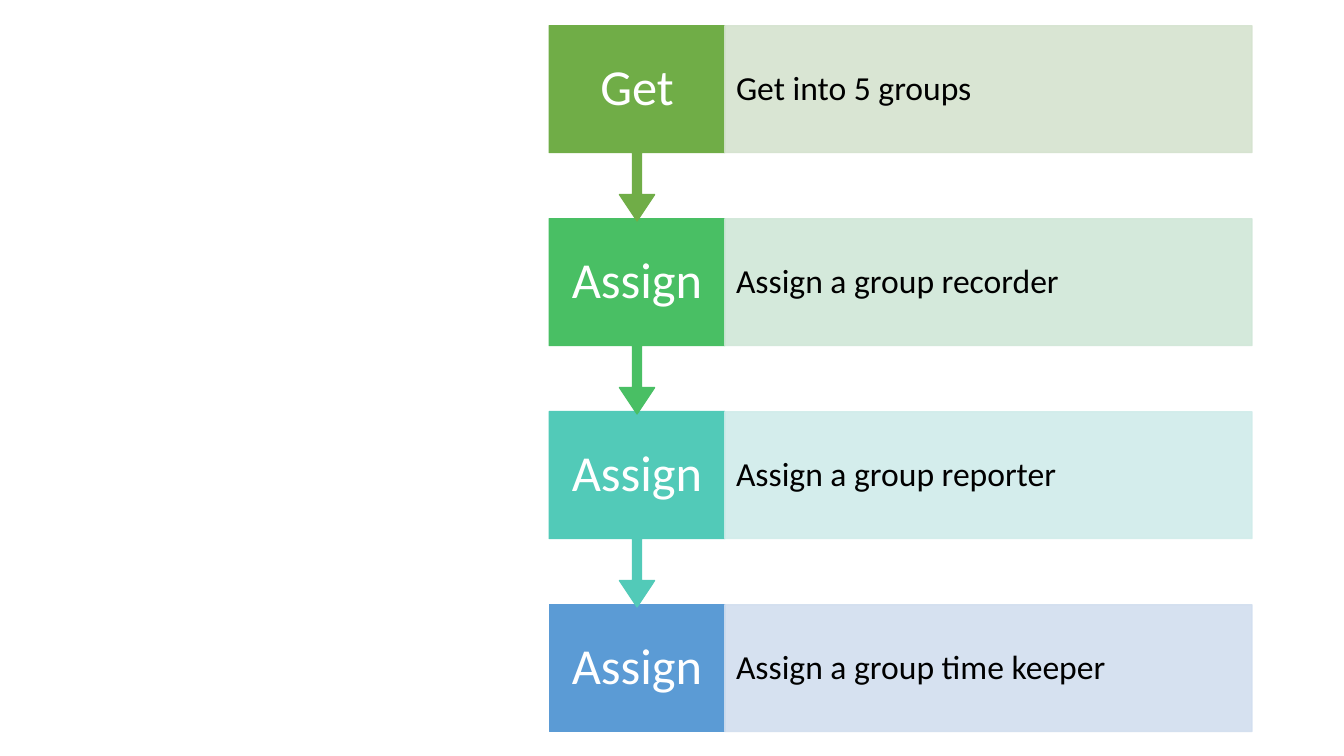
"""Build a slide with four group set-up steps joined by arrows."""
from dataclasses import dataclass

from lxml import etree
from pptx import Presentation
from pptx import util as u
from pptx.dml.color import RGBColor
from pptx.enum import shapes, text
from pptx.oxml import ns


@dataclass(frozen=True)
class Theme:
    font: str = "Calibri"
    verb_size: float = 36
    task_size: float = 24
    verb_color: str = "FFFFFF"
    task_color: str = "000000"
    line_width: float = 1
    line_spacing: float = 0.9
    task_opacity: int = 90
    step_colors: tuple = (
        ("70AD47", "D5E3CF"),
        ("49BF64", "D0E7D8"),
        ("52CAB8", "D0ECEA"),
        ("5B9BD5", "D2DEEF"),
    )


class StepSlide:
    def __init__(self, slide, theme):
        self.slide = slide
        self.theme = theme

    def box(self, kind, left, top, width, height, color):
        shape = self.slide.shapes.add_shape(
            kind, u.Pt(left), u.Pt(top), u.Pt(width), u.Pt(height))
        shape.shadow.inherit = False
        shape.fill.solid()
        shape.fill.fore_color.rgb = RGBColor.from_string(color)
        shape.line.color.rgb = RGBColor.from_string(color)
        shape.line.width = u.Pt(self.theme.line_width)
        return shape

    def label(self, shape, words, size, color, align, inset_x, inset_y):
        frame = shape.text_frame
        frame.word_wrap = True
        frame.vertical_anchor = text.MSO_ANCHOR.MIDDLE
        frame.margin_left = frame.margin_right = u.Pt(inset_x)
        frame.margin_top = frame.margin_bottom = u.Pt(inset_y)
        paragraph = frame.paragraphs[0]
        paragraph.alignment = align
        paragraph.line_spacing = self.theme.line_spacing
        run = paragraph.add_run()
        run.text = words
        run.font.name = self.theme.font
        run.font.size = u.Pt(size)
        run.font.color.rgb = RGBColor.from_string(color)

    def verb(self, words, left, top, width, height, color, arrow_height=0):
        kind = shapes.MSO_SHAPE.RECTANGLE
        if arrow_height:
            kind = shapes.MSO_SHAPE.DOWN_ARROW_CALLOUT
        shape = self.box(kind, left, top, width, height + arrow_height, color)
        if arrow_height:
            for i, ratio in enumerate((0.05, 0.1, 0.15, 0.65)):
                shape.adjustments[i] = ratio
        self.label(shape, words, self.theme.verb_size, self.theme.verb_color,
                   text.PP_ALIGN.CENTER, 8.9, 20)

    def task(self, words, left, top, width, height, color):
        shape = self.box(shapes.MSO_SHAPE.RECTANGLE, left, top, width, height, color)
        for tint in shape._element.spPr.iter(ns.qn("a:srgbClr")):
            alpha = etree.SubElement(tint, ns.qn("a:alpha"))
            alpha.set("val", str(self.theme.task_opacity * 1000))
        self.label(shape, words, self.theme.task_size, self.theme.task_color,
                   text.PP_ALIGN.LEFT, 8, 23.5)


STEPS = (
    ("Get", "Get into 5 groups"),
    ("Assign", "Assign a group recorder"),
    ("Assign", "Assign a group reporter"),
    ("Assign", "Assign a group time keeper"),
)
LEFT, TOP, PITCH = 392.3, 18.4, 137.85
VERB_WIDTH, TASK_WIDTH, STEP_HEIGHT, ARROW_HEIGHT = 125.5, 376.5, 90.6, 48.8


def main():
    deck = Presentation()
    deck.slide_width, deck.slide_height = u.Pt(960), u.Pt(540)
    theme = Theme()
    page = StepSlide(deck.slides.add_slide(deck.slide_layouts[6]), theme)
    last = len(STEPS) - 1
    for i in range(last, -1, -1):
        verb, task = STEPS[i]
        strong, pale = theme.step_colors[i]
        top = TOP + i * PITCH
        page.verb(verb, LEFT, top, VERB_WIDTH, STEP_HEIGHT, strong,
                  ARROW_HEIGHT if i < last else 0)
        page.task(task, LEFT + VERB_WIDTH, top, TASK_WIDTH, STEP_HEIGHT, pale)
    deck.save("out.pptx")


if __name__ == "__main__":
    main()
